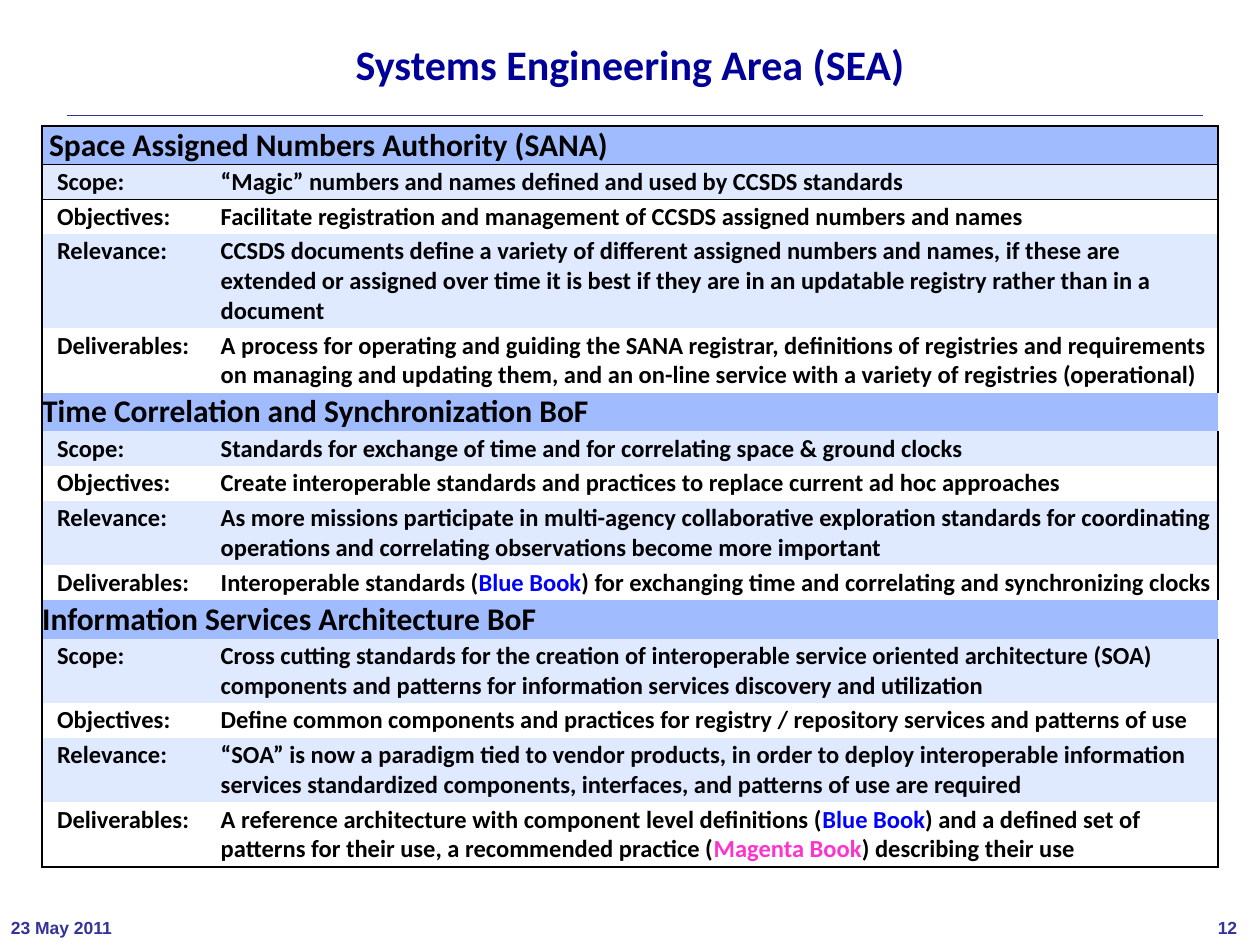
import pptx
import pptx.util
import pptx.dml.color
import pptx.enum.shapes
import pptx.enum.text
import pptx.oxml.ns
from dataclasses import dataclass
from lxml import etree
from pptx.util import Cm, Pt

TITLE = "Systems Engineering Area (SEA)"
DATE = "23 May 2011"
PAGE = "12"
BLUE_BOOK = ("Blue Book", "blue_book")
MAGENTA_BOOK = ("Magenta Book", "magenta_book")
LABELS = ["Scope:", "Objectives:", "Relevance:", "Deliverables:"]

GROUPS = [
    ("Space Assigned Numbers Authority (SANA)", [
        (1, ["“Magic” numbers and names defined and used by CCSDS standards"]),
        (1, ["Facilitate registration and management of CCSDS assigned numbers and names"]),
        (3, ["CCSDS documents define a variety of different assigned numbers and names, "
             "if these are extended or assigned over time it is best if they are in an "
             "updatable registry rather than in a document"]),
        (2, ["A process for operating and guiding the SANA registrar, definitions of "
             "registries and requirements on managing and updating them, and an on-line "
             "service with a variety of registries (operational)"]),
    ]),
    ("Time Correlation and Synchronization BoF", [
        (1, ["Standards for exchange of time and for correlating space & ground clocks"]),
        (1, ["Create interoperable standards and practices to replace current ad hoc approaches"]),
        (2, ["As more missions participate in multi-agency collaborative exploration "
             "standards for coordinating operations and correlating observations become "
             "more important"]),
        (1, ["Interoperable standards (", BLUE_BOOK,
             ") for exchanging time and correlating and synchronizing clocks"]),
    ]),
    ("Information Services Architecture BoF", [
        (2, ["Cross cutting standards for the creation of interoperable service oriented "
             "architecture (SOA) components and patterns for information services "
             "discovery and utilization"]),
        (1, ["Define common components and practices for registry / repository services "
             "and patterns of use"]),
        (2, ["“SOA” is now a paradigm tied to vendor products, in order to deploy "
             "interoperable information services standardized components, interfaces, "
             "and patterns of use are required"]),
        (2, ["A reference architecture with component level definitions (", BLUE_BOOK,
             ") and a defined set of patterns for their use, a recommended practice (",
             MAGENTA_BOOK, ") describing their use"]),
    ]),
]


@dataclass(frozen=True)
class Theme:
    body_font: str = "Calibri"
    footer_font: str = "Arial"
    title: str = "000099"
    footer: str = "333399"
    ink: str = "000000"
    blue_book: str = "0000FF"
    magenta_book: str = "FF33CC"
    heading_fill: str = "A0BCFE"
    band_fill: str = "DFE9FF"
    plain_fill: str = "FFFFFF"
    title_size: int = 24
    heading_size: int = 18
    body_size: int = 14
    footer_size: int = 10


THEME = Theme()
HEADING_HEIGHT, LINE_HEIGHT, ROW_PADDING = 0.78, 0.6, 0.1
PLAIN_STYLE = "{2D5ABB26-0587-4C30-8999-92F81FD0307C}"


def rgb(value):
    return pptx.dml.color.RGBColor.from_string(value)


def style(run, size, color, font):
    run.font.size, run.font.bold, run.font.name = Pt(size), True, font
    run.font.color.rgb = rgb(color)


def write(paragraph, parts, size, color, font=THEME.body_font):
    for part in parts:
        words, role = (part, None) if isinstance(part, str) else part
        run = paragraph.add_run()
        run.text = words
        style(run, size, getattr(THEME, role) if role else color, font)


def add_label(slide, words, place, size, color, font, wrap):
    frame = slide.shapes.add_textbox(*map(Cm, place)).text_frame
    frame.word_wrap = wrap
    if not wrap:
        frame.auto_size = pptx.enum.text.MSO_AUTO_SIZE.SHAPE_TO_FIT_TEXT
        frame.margin_left = frame.margin_right = Cm(0.22)
        frame.margin_top = frame.margin_bottom = Cm(0.11)
    paragraph = frame.paragraphs[0]
    write(paragraph, [words], size, color, font)
    return paragraph


def fill_cell(cell, parts, size, fill, sides, left=0, pad=0):
    cell.margin_left, cell.margin_right = Cm(left), 0
    cell.margin_top = cell.margin_bottom = Cm(pad)
    properties = cell._tc.get_or_add_tcPr()
    for side in "LRTB":
        if side in sides:
            edge = etree.SubElement(properties, pptx.oxml.ns.qn(f"a:ln{side}"), w=str(Pt(1)))
            solid = etree.SubElement(edge, pptx.oxml.ns.qn("a:solidFill"))
            etree.SubElement(solid, pptx.oxml.ns.qn("a:srgbClr"), val=THEME.ink)
    cell.fill.solid()
    cell.fill.fore_color.rgb = rgb(fill)
    write(cell.text_frame.paragraphs[0], parts, size, THEME.ink)


def add_areas(slide):
    heights = []
    for _, entries in GROUPS:
        heights.append(HEADING_HEIGHT)
        heights += [lines * LINE_HEIGHT + ROW_PADDING for lines, _ in entries]
    frame = slide.shapes.add_table(len(heights), 2, Cm(0.85), Cm(2.54), Cm(23.7), Cm(sum(heights)))
    areas = frame.table
    frame._element.find(".//" + pptx.oxml.ns.qn("a:tableStyleId")).text = PLAIN_STYLE
    areas.first_row = areas.horz_banding = False
    for column, width in zip(areas.columns, (3.6, 20.1)):
        column.width = Cm(width)
    for row, height in zip(areas.rows, heights):
        row.height = Cm(height)

    index, last = 0, len(heights) - 1
    for group, (heading, entries) in enumerate(GROUPS):
        first = group == 0
        areas.cell(index, 0).merge(areas.cell(index, 1))
        fill_cell(areas.cell(index, 0), [heading], THEME.heading_size, THEME.heading_fill,
                  "LRT" if first else "L", 0.14 if first else 0)
        if first:
            fill_cell(areas.cell(index, 1), [], THEME.heading_size, THEME.heading_fill, "RT")
        for position, (label, (_, parts)) in enumerate(zip(LABELS, entries)):
            index += 1
            fill = THEME.plain_fill if position % 2 else THEME.band_fill
            edges = ("T" if index == 1 else "") + ("B" if index == last else "")
            fill_cell(areas.cell(index, 0), [label], THEME.body_size, fill, "L" + edges, 0.3, 0.05)
            fill_cell(areas.cell(index, 1), parts, THEME.body_size, fill, "R" + edges, 0, 0.05)
        index += 1


def main():
    deck = pptx.Presentation()
    deck.slide_width, deck.slide_height = Cm(25.4), Cm(19.05)
    slide = deck.slides.add_slide(deck.slide_layouts[6])

    rule = slide.shapes.add_connector(
        pptx.enum.shapes.MSO_CONNECTOR.STRAIGHT, Cm(1.35), Cm(2.33), Cm(24.25), Cm(2.33))
    rule.line.color.rgb = rgb(THEME.footer)
    rule.line.width = Pt(0.12)
    etree.SubElement(rule._element.spPr, pptx.oxml.ns.qn("a:effectLst"))

    for words, place in [(PAGE, (24.33, 18.38, 0.9, 0.66)), (DATE, (0, 18.38, 2.52, 0.66))]:
        add_label(slide, words, place, THEME.footer_size, THEME.footer, THEME.footer_font, False)

    title = add_label(slide, TITLE, (1.27, 0.76, 22.86, 1.35), THEME.title_size,
                      THEME.title, THEME.body_font, True)
    title.alignment = pptx.enum.text.PP_ALIGN.CENTER
    title.line_spacing = 0.9

    add_areas(slide)
    deck.save("out.pptx")


if __name__ == "__main__":
    main()
